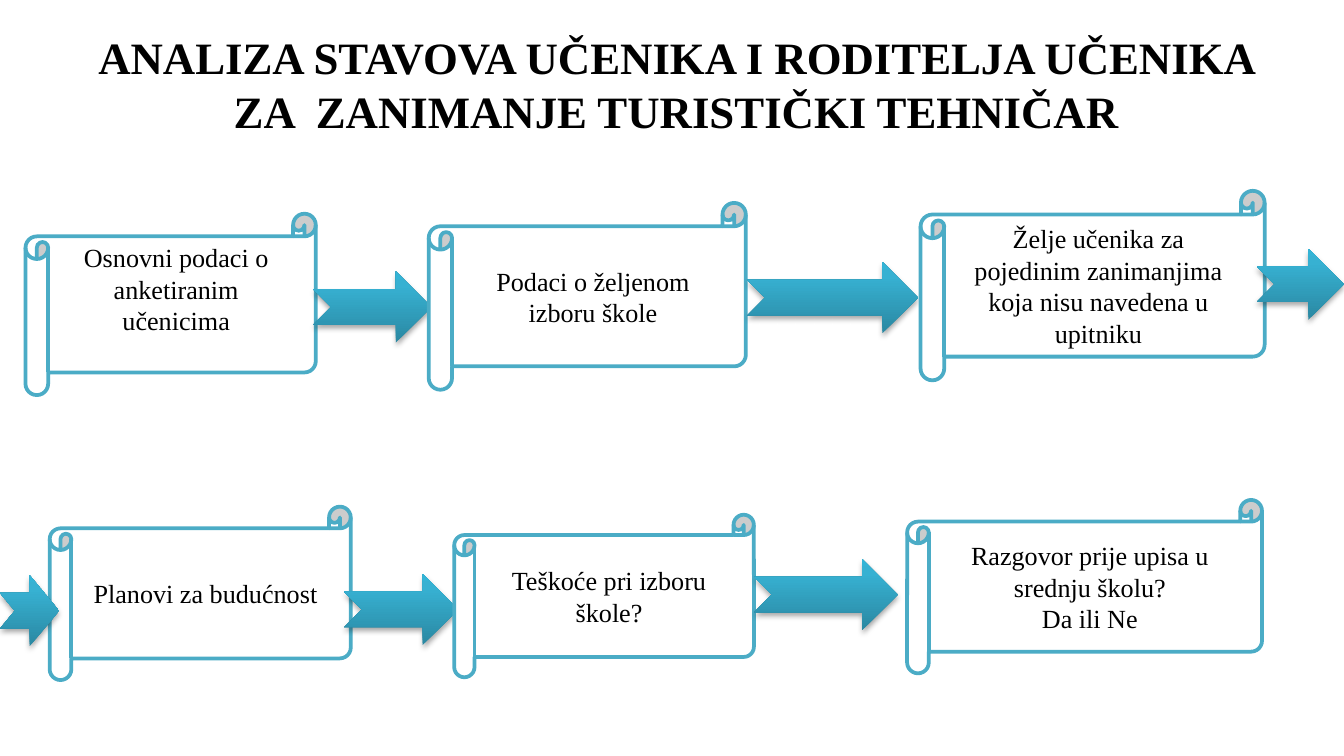
from dataclasses import dataclass
from typing import NamedTuple

from lxml.etree import SubElement
from pptx import Presentation
from pptx.dml.color import RGBColor as RGB
from pptx.enum.shapes import MSO_SHAPE as Preset
from pptx.enum.text import MSO_ANCHOR as Anchor, PP_ALIGN as Align
from pptx.oxml.ns import qn
from pptx.util import Inches, Pt

# The slide is a grid of 100 columns by 56.25 rows
COLUMNS, ROWS = 100, 56.25
CELL = Inches(0.1)


@dataclass(frozen=True)
class Theme:
    font: str = "Times New Roman"
    ink: str = "000000"
    paper: str = "FFFFFF"
    outline: str = "4BACC6"
    gradient: tuple = ((0, "2A88A2"), (80, "37B1D2"), (100, "34B4D6"))
    title_size: float = 24
    body_size: float = 14
    outline_width: float = 2


class Scroll(NamedTuple):
    box: tuple
    lines: tuple
    lift: float = 0  # extra bottom margin, in rows


class Arrow(NamedTuple):
    column: float
    row: float
    span: float
    height: float = 5.3


THEME = Theme()
TITLE = "ANALIZA STAVOVA UČENIKA I RODITELJA UČENIKA ZA  ZANIMANJE TURISTIČKI TEHNIČAR"
TITLE_BOX = (5.3, 1.5, 90, 9.4)

# Back to front: the arrows tuck under the scroll that follows them
FLOW = (
    Scroll((1.9, 15.9, 21.6, 13.5), ("Osnovni podaci o anketiranim učenicima",), 2.3),
    Arrow(23.3, 20.2, 8.8),
    Scroll((31.9, 15.1, 23.6, 13.9), ("Podaci o željenom izboru škole",)),
    Arrow(55.6, 19.5, 12.7),
    Scroll((68.5, 14.2, 25.6, 14.1),
           ("Želje učenika za pojedinim zanimanjima koja nisu navedena u upitniku",)),
    Scroll((3.7, 37.7, 22.4, 12.9), ("Planovi za budućnost",)),
    Arrow(25.6, 42.7, 8.5),
    Scroll((33.8, 38.3, 22.3, 12.1), ("Teškoće pri izboru škole?",)),
    Arrow(56.1, 41.6, 10.7),
    Scroll((67.5, 37.2, 26.4, 12.9),
           ("Razgovor prije upisa u srednju školu?", "Da ili Ne")),
    Arrow(93.5, 18.5, 6.5),
    Arrow(0, 42.8, 4.4),
)


def cells(values) -> list[int]:
    return [round(value * CELL) for value in values]


def write(frame, lines: tuple, size: float, bold: bool = False) -> None:
    frame.word_wrap = True
    frame.vertical_anchor = Anchor.MIDDLE
    style = {"name": THEME.font, "size": Pt(size), "bold": bold}
    for index, line in enumerate(lines):
        paragraph = frame.add_paragraph() if index else frame.paragraphs[0]
        paragraph.alignment = Align.CENTER
        run = paragraph.add_run()
        run.text = line
        for name, value in style.items():
            setattr(run.font, name, value)
        run.font.color.rgb = RGB.from_string(THEME.ink)


def draw_scroll(slide, scroll: Scroll) -> None:
    panel = slide.shapes.add_shape(Preset.HORIZONTAL_SCROLL, *cells(scroll.box))
    panel.shadow.inherit = False
    panel.fill.solid()
    panel.fill.fore_color.rgb = RGB.from_string(THEME.paper)
    panel.line.color.rgb = RGB.from_string(THEME.outline)
    panel.line.width = Pt(THEME.outline_width)
    panel.text_frame.margin_bottom = Inches(0.05) + round(scroll.lift * CELL)
    write(panel.text_frame, scroll.lines, THEME.body_size)


def draw_arrow(slide, arrow: Arrow) -> None:
    pointer = slide.shapes.add_shape(Preset.NOTCHED_RIGHT_ARROW, *cells(arrow))
    pointer.line.fill.background()

    # Three-stop gradient, dark at the bottom
    pointer.fill.gradient()
    pointer.fill.gradient_angle = 90
    stops = pointer._element.spPr.find(".//" + qn("a:gsLst"))
    for stop in list(stops):
        stops.remove(stop)
    for position, color in THEME.gradient:
        stop = SubElement(stops, qn("a:gs"), pos=str(position * 1000))
        SubElement(stop, qn("a:srgbClr"), val=color)

    # Soft shadow straight below
    pointer.shadow.inherit = False
    effects = pointer._element.spPr.find(qn("a:effectLst"))
    shadow = SubElement(effects, qn("a:outerShdw"), blurRad=str(Pt(3.1)),
                        dist=str(Pt(1.8)), dir="5400000", rotWithShape="0")
    color = SubElement(shadow, qn("a:srgbClr"), val=THEME.ink)
    SubElement(color, qn("a:alpha"), val="35000")


def main() -> None:
    deck = Presentation()
    deck.slide_width, deck.slide_height = cells((COLUMNS, ROWS))
    slide = deck.slides.add_slide(deck.slide_layouts[5])

    # Title
    title = slide.shapes.title
    title.left, title.top, title.width, title.height = cells(TITLE_BOX)
    write(title.text_frame, (TITLE,), THEME.title_size, bold=True)

    # Two rows of steps
    for part in FLOW:
        draw = draw_scroll if isinstance(part, Scroll) else draw_arrow
        draw(slide, part)

    deck.save("out.pptx")


if __name__ == "__main__":
    main()
